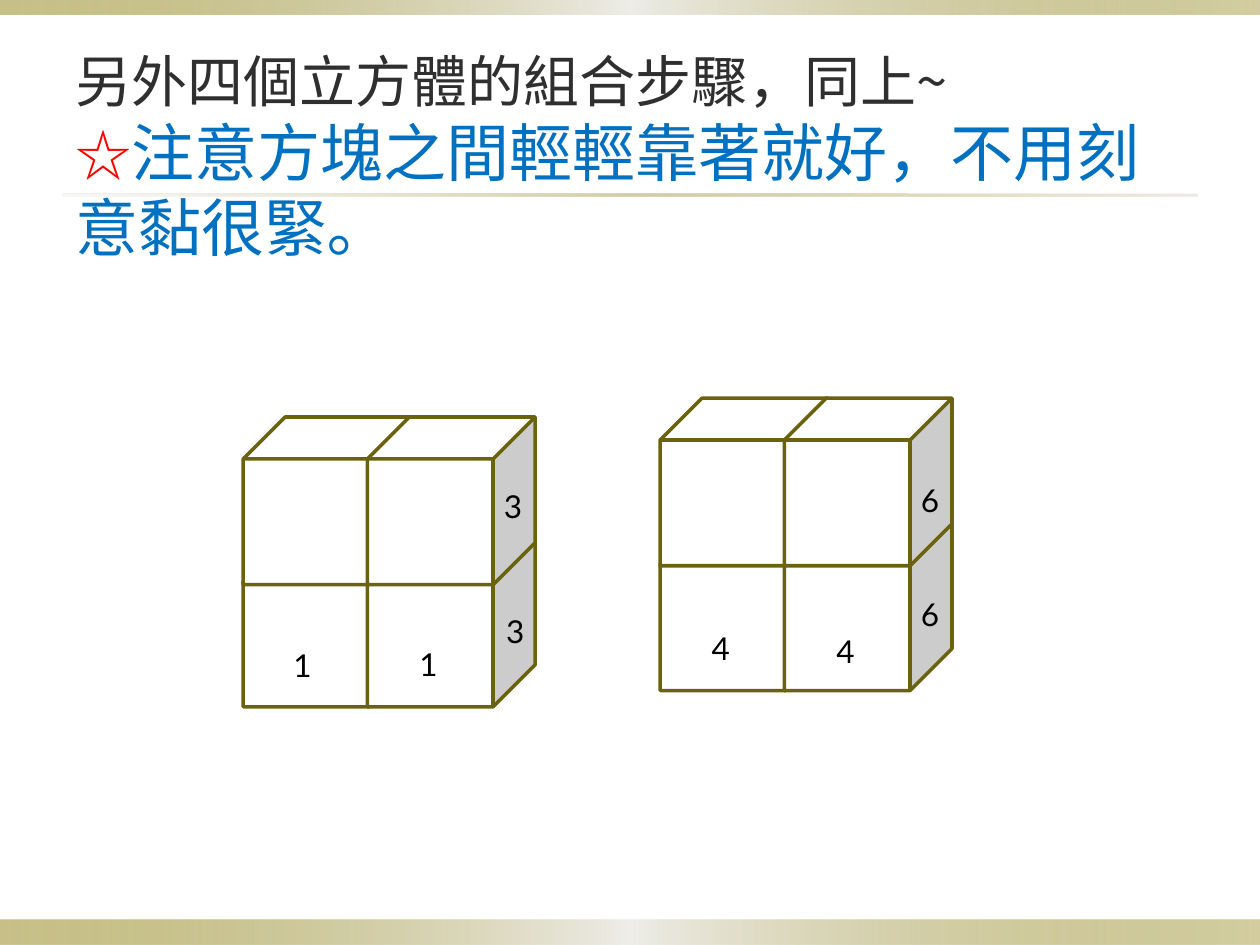
from lxml import etree
from pptx import Presentation
from pptx.dml.color import RGBColor
from pptx.enum.shapes import MSO_SHAPE
from pptx.enum.text import MSO_ANCHOR, MSO_AUTO_SIZE
from pptx.oxml.ns import qn
from pptx.util import Pt

CUBE, RECT = MSO_SHAPE.CUBE, MSO_SHAPE.RECTANGLE
MIDDLE, GROW = MSO_ANCHOR.MIDDLE, MSO_AUTO_SIZE.SHAPE_TO_FIT_TEXT

WHITE = RGBColor(0xFF, 0xFF, 0xFF)
BLACK = RGBColor(0, 0, 0)
GREY = RGBColor(0x2F, 0x2F, 0x2F)
RED = RGBColor(0xFF, 0, 0)
BLUE = RGBColor(0, 0x70, 0xC0)
OLIVE = RGBColor(0x6B, 0x62, 0x10)
GOLD = RGBColor(0x91, 0x84, 0x15)
PALE = RGBColor(0xEE, 0xED, 0xE8)
SAND = RGBColor(0xDC, 0xD9, 0xCC)

LATIN = "Lato"
HAN = "Noto Sans CJK JP"
MARK = "Noto Sans CJK TC"

# Gradient stops: position, colour, opacity in percent
BAND = [(0, GOLD, 50), (50, PALE, 100), (100, GOLD, 40)]
RULE = [(0, SAND, 20), (50, GOLD, 40), (100, SAND, 50)]


class Page:
    def __init__(self, slide):
        self.slide = slide

    def shape(self, kind, x, y, w, h):
        item = self.slide.shapes.add_shape(kind, Pt(x), Pt(y), Pt(w), Pt(h))
        item.shadow.inherit = False
        return item

    def band(self, x, y, w, h, stops):
        bar = self.shape(RECT, x, y, w, h)
        bar.line.fill.background()
        bar.fill.gradient()
        bar.fill.gradient_angle = 0
        rows = bar.fill._fill._gradFill.find(qn("a:gsLst"))
        for old in list(rows):
            rows.remove(old)
        for pos, color, alpha in stops:
            stop = etree.SubElement(rows, qn("a:gs"), pos=str(pos * 1000))
            tint = etree.SubElement(stop, qn("a:srgbClr"), val=str(color))
            etree.SubElement(tint, qn("a:alpha"), val=str(alpha * 1000))

    def cube(self, x, y, size):
        box = self.shape(CUBE, x, y, size, size)
        box.fill.solid()
        box.fill.fore_color.rgb = WHITE
        box.line.color.rgb = OLIVE
        box.line.width = Pt(2)

    def style(self, run, size, face, color):
        run.font.size = Pt(size)
        run.font.name = face
        run.font.color.rgb = color
        etree.SubElement(run.font._element, qn("a:ea"), typeface=face)

    def text(self, x, y, w, h):
        box = self.slide.shapes.add_textbox(Pt(x), Pt(y), Pt(w), Pt(h))
        return box.text_frame

    def label(self, x, y, text):
        frame = self.text(x, y, 25, 29)
        frame.word_wrap = False
        frame.auto_size = GROW
        frame.text = text
        self.style(frame.paragraphs[0].runs[0], 18, LATIN, BLACK)

    def title(self, x, y, w, h, lines):
        frame = self.text(x, y, w, h)
        frame.word_wrap = True
        frame.vertical_anchor = MIDDLE
        frame.margin_top = frame.margin_bottom = 0
        para = frame.paragraphs[0]
        para.line_spacing = Pt(43)
        for i, line in enumerate(lines):
            if i:
                para.add_line_break()
            for text, size, face, color in line:
                run = para.add_run()
                run.text = text
                self.style(run, size, face, color)


def main():
    deck = Presentation()
    deck.slide_width, deck.slide_height = Pt(720), Pt(540)
    page = Page(deck.slides.add_slide(deck.slide_layouts[6]))

    # Bands and rule
    page.band(0, 525.6, 720, 14.4, BAND)
    page.band(0, 0, 720, 8.6, BAND)
    page.band(36, 110.9, 648, 1.4, RULE)

    # Title
    page.title(36, 21.6, 648, 129.6, [
        [("另外四個立方體的組合步驟", 32, HAN, GREY),
         ("，", 32, MARK, GREY),
         ("同上", 32, HAN, GREY),
         ("~", 32, MARK, GREY)],
        [("☆", 32, MARK, RED),
         ("注意方塊之間輕輕靠著就好", 36, HAN, BLUE),
         ("，", 36, MARK, BLUE),
         ("不用刻意黏很緊", 36, HAN, BLUE),
         ("｡", 36, MARK, BLUE)],
    ])

    # Two stacks of four cubes, lower row first
    size, step = 95.8, 71
    for left, top, rise in [(139, 238.3, 69.8), (377.2, 227.5, 71.3)]:
        for row in (1, 0):
            for col in (0, 1):
                page.cube(left + col * step, top + row * rise, size)

    # Numbers on the faces
    for x, y, text in [
        (160.6, 365.8, "1"), (232.6, 365, "1"),
        (280.8, 275, "3"), (282.2, 346.3, "3"),
        (399.6, 355.7, "4"), (470.9, 357.8, "4"),
        (519.1, 271.4, "6"), (519.1, 336.2, "6"),
    ]:
        page.label(x, y, text)

    deck.save("out.pptx")


if __name__ == "__main__":
    main()
